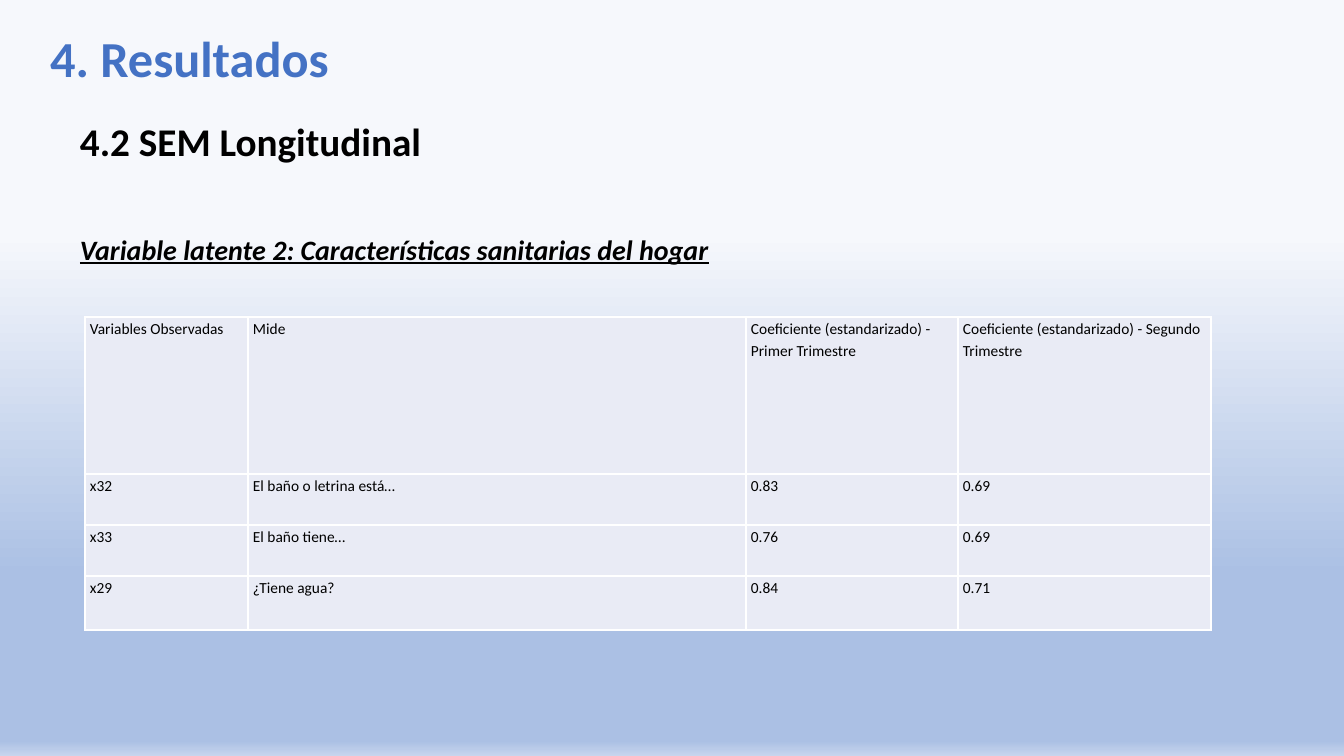
from dataclasses import dataclass

from lxml.etree import SubElement as Sub
from pptx import Presentation
from pptx.dml.color import RGBColor as RGB
from pptx.enum.text import PP_ALIGN as Align
from pptx.oxml.ns import qn
from pptx.util import Pt

PX = 914400 / 100.8


@dataclass(frozen=True)
class Theme:
    font: str = "Calibri"
    blue: str = "4472C4"
    ink: str = "000000"
    cell: str = "E9EBF5"
    edge: str = "FFFFFF"
    fade: tuple = ((31, "F6F8FC"), (76, "ABC0E4"), (98, "ABC0E4"), (100, "C7D5ED"))
    title: int = 36
    head: int = 28
    sub: int = 20
    body: int = 11


LOOK = Theme()

WIDTHS = (163, 498, 212, 253)
HEIGHTS = (157, 51, 51, 54)
ROWS = (
    ("Variables Observadas", "Mide",
     "Coeficiente (estandarizado) - Primer Trimestre",
     "Coeficiente (estandarizado) - Segundo Trimestre"),
    ("x32", "El baño o letrina está…", "0.83", "0.69"),
    ("x33", "El baño tiene…", "0.76", "0.69"),
    ("x29", "¿Tiene agua?", "0.84", "0.71"),
)


def px(n):
    return round(n * PX)


def paint(slide):
    """Fill the background with a vertical fade."""
    fill = slide.background.fill
    fill.gradient()
    fill.gradient_angle = 270
    stops = slide.element.find(".//" + qn("a:gsLst"))
    stops.clear()
    for pos, color in LOOK.fade:
        stop = Sub(stops, qn("a:gs"), pos=str(pos * 1000))
        Sub(stop, qn("a:srgbClr"), val=color)


def style(par, size, color=LOOK.ink, space=1.15, bold=False):
    par.line_spacing = space
    font = par.font
    font.name, font.size, font.bold = LOOK.font, Pt(size), bold
    font.color.rgb = RGB.from_string(color)


def add_box(slide, x, y, w, h, left, top):
    frame = slide.shapes.add_textbox(px(x), px(y), px(w), px(h)).text_frame
    frame.word_wrap = True
    frame.margin_left = px(left)
    frame.margin_top = frame.margin_bottom = px(top)
    return frame


def add_edges(cell):
    props = cell._tc.get_or_add_tcPr()
    for side in "LRTB":
        line = Sub(props, qn(f"a:ln{side}"), w=str(Pt(1)))
        Sub(Sub(line, qn("a:solidFill")), qn("a:srgbClr"), val=LOOK.edge)


def fill_cell(cell, text):
    cell.margin_left = cell.margin_right = px(5)
    cell.margin_top = cell.margin_bottom = 0
    add_edges(cell)
    cell.fill.solid()
    cell.fill.fore_color.rgb = RGB.from_string(LOOK.cell)
    cell.text = text
    style(cell.text_frame.paragraphs[0], LOOK.body)


def add_grid(slide, x, y):
    table = slide.shapes.add_table(
        len(ROWS), len(WIDTHS), px(x), px(y),
        px(sum(WIDTHS)), px(sum(HEIGHTS))).table
    table.first_row = table.horz_banding = False
    for col, width in zip(table.columns, WIDTHS):
        col.width = px(width)
    for row, height, texts in zip(table.rows, HEIGHTS, ROWS):
        row.height = px(height)
        for cell, text in zip(row.cells, texts):
            fill_cell(cell, text)


def main():
    deck = Presentation()
    deck.slide_width, deck.slide_height = px(1344), px(756)
    slide = deck.slides.add_slide(deck.slide_layouts[6])
    paint(slide)

    # Title
    par = add_box(slide, 40, 34, 1159, 86, left=10, top=0).paragraphs[0]
    par.text = "4. Resultados"
    style(par, LOOK.title, LOOK.blue, space=0.9, bold=True)

    # Section heading and latent variable
    frame = add_box(slide, 40, 105, 1262, 233, left=40, top=5)
    head, sub = frame.paragraphs[0], frame.add_paragraph()
    head.text = "4.2 SEM Longitudinal"
    sub.text = "Variable latente 2: Características sanitarias del hogar"
    for par, size in ((head, LOOK.head), (sub, LOOK.sub)):
        style(par, size, bold=True)
        par.alignment = Align.JUSTIFY
    head.space_after = Pt(45)
    sub.font.italic = sub.font.underline = True

    # Coefficients
    add_grid(slide, 85, 317)

    deck.save("out.pptx")


if __name__ == "__main__":
    main()
